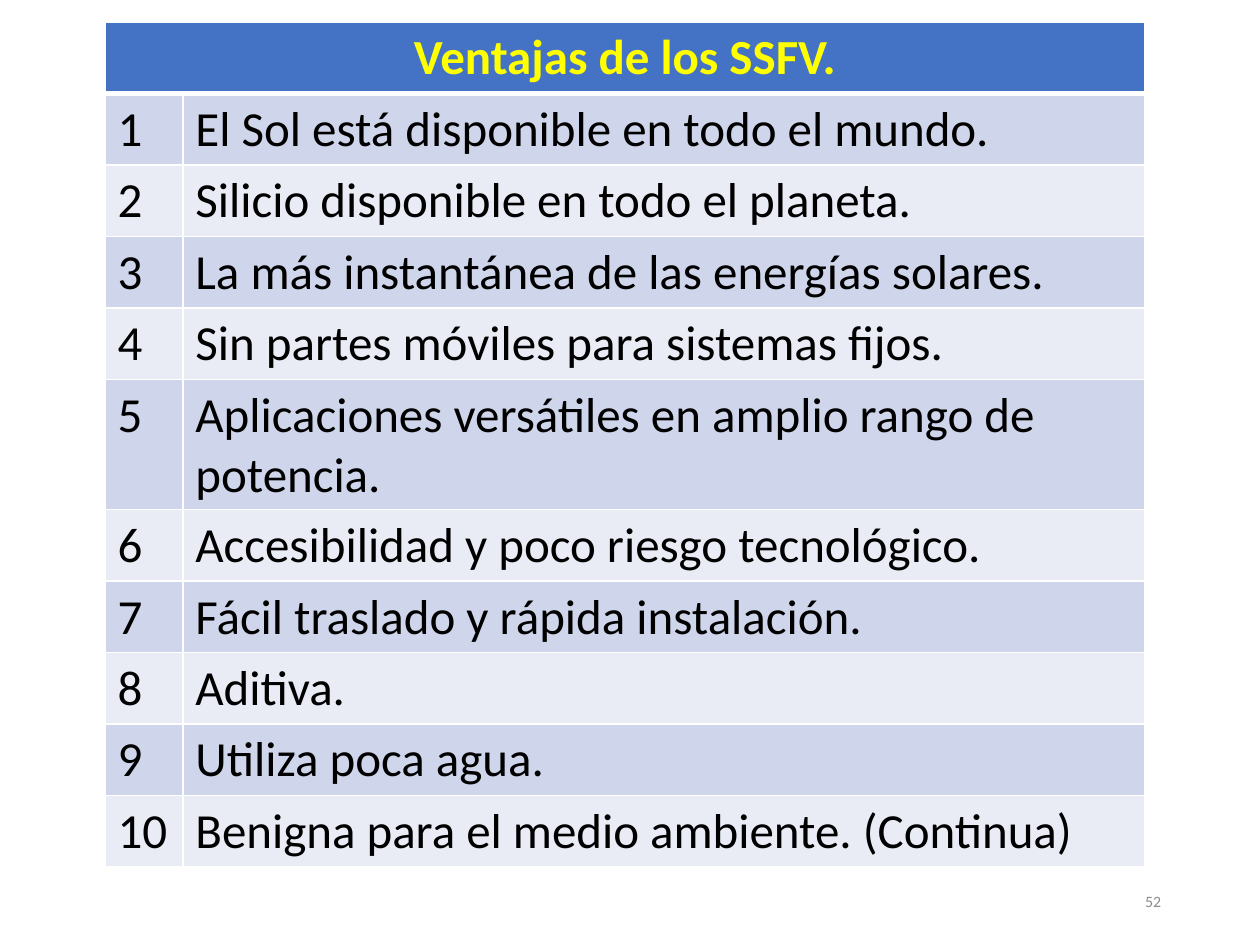
from dataclasses import dataclass

from lxml.etree import SubElement
from pptx import Presentation
from pptx.dml.color import RGBColor
from pptx.enum.text import MSO_ANCHOR, PP_ALIGN
from pptx.oxml.ns import qn
from pptx.util import Pt


@dataclass(frozen=True)
class Theme:
    font: str = "Calibri"
    table_size: float = 28
    number_size: float = 9
    header_fill: str = "4472C4"
    header_text: str = "FFFF00"
    odd_fill: str = "CFD5EA"
    even_fill: str = "E9EBF5"
    border: str = "FFFFFF"
    text: str = "000000"
    muted: str = "8C8C8C"
    thin: float = 1
    thick: float = 3


HEADING = "Ventajas de los SSFV."
ADVANTAGES = [
    "El Sol está disponible en todo el mundo.",
    "Silicio disponible en todo el planeta.",
    "La más instantánea de las energías solares.",
    "Sin partes móviles para sistemas fijos.",
    "Aplicaciones versátiles en amplio rango de potencia.",
    "Accesibilidad y poco riesgo tecnológico.",
    "Fácil traslado y rápida instalación.",
    "Aditiva.",
    "Utiliza poca agua.",
    "Benigna para el medio ambiente. (Continua)",
]


def write_text(text_frame, text, *, font, size, color, bold=False, align=PP_ALIGN.LEFT):
    paragraph = text_frame.paragraphs[0]
    paragraph.alignment = align
    run = paragraph.add_run()
    run.text = text
    run.font.name = font
    run.font.size = Pt(size)
    run.font.bold = bold
    run.font.color.rgb = RGBColor.from_string(color)


def set_borders(cell, color, **widths):
    """Draw the cell borders; call before the fill, which must follow them in the XML."""
    properties = cell._tc.get_or_add_tcPr()
    for side in ("L", "R", "T", "B"):
        line = SubElement(properties, qn(f"a:ln{side}"), w=str(Pt(widths[side])))
        fill = SubElement(line, qn("a:solidFill"))
        SubElement(fill, qn("a:srgbClr"), val=color)


class SlideBuilder:
    def __init__(self, slide, theme):
        self.slide = slide
        self.theme = theme

    def style_cell(self, cell, fill, top, bottom):
        thin = self.theme.thin
        set_borders(cell, self.theme.border, L=thin, R=thin, T=top, B=bottom)
        cell.fill.solid()
        cell.fill.fore_color.rgb = RGBColor.from_string(fill)

    def numbered_table(self, heading, items, left, top, column_widths, row_height, height):
        """Add a merged heading row and one numbered row per item; rows grow to fit text."""
        theme = self.theme
        row_count = len(items) + 1
        frame = self.slide.shapes.add_table(
            row_count, len(column_widths), Pt(left), Pt(top),
            Pt(sum(column_widths)), Pt(row_height * row_count))
        table = frame.table
        for column, width in zip(table.columns, column_widths):
            column.width = Pt(width)
        frame.height = Pt(height)

        heading_cell = table.cell(0, 0)
        heading_cell.merge(table.cell(0, len(column_widths) - 1))
        for cell in table.rows[0].cells:
            self.style_cell(cell, theme.header_fill, theme.thin, theme.thick)
        write_text(heading_cell.text_frame, heading, font=theme.font, size=theme.table_size,
                   color=theme.header_text, bold=True, align=PP_ALIGN.CENTER)

        for number, item in enumerate(items, start=1):
            fill = theme.odd_fill if number % 2 else theme.even_fill
            top_width = theme.thick if number == 1 else theme.thin
            for cell, text in zip(table.rows[number].cells, (str(number), item)):
                self.style_cell(cell, fill, top_width, theme.thin)
                write_text(cell.text_frame, text, font=theme.font,
                           size=theme.table_size, color=theme.text)

    def page_number(self, text, left, top, width, height):
        shape = self.slide.shapes.add_textbox(Pt(left), Pt(top), Pt(width), Pt(height))
        text_frame = shape.text_frame
        text_frame.word_wrap = True
        text_frame.vertical_anchor = MSO_ANCHOR.MIDDLE
        write_text(text_frame, text, font=self.theme.font, size=self.theme.number_size,
                   color=self.theme.muted, align=PP_ALIGN.RIGHT)


def main():
    presentation = Presentation()
    presentation.slide_width = Pt(720)
    presentation.slide_height = Pt(540)
    slide = presentation.slides.add_slide(presentation.slide_layouts[6])
    builder = SlideBuilder(slide, Theme())
    builder.page_number("52", left=508.5, top=500.5, width=162, height=28.75)
    builder.numbered_table(HEADING, ADVANTAGES, left=60, top=12.5,
                           column_widths=(44.5, 549.5), row_height=29.5, height=482.5)
    presentation.save("out.pptx")


if __name__ == "__main__":
    main()
